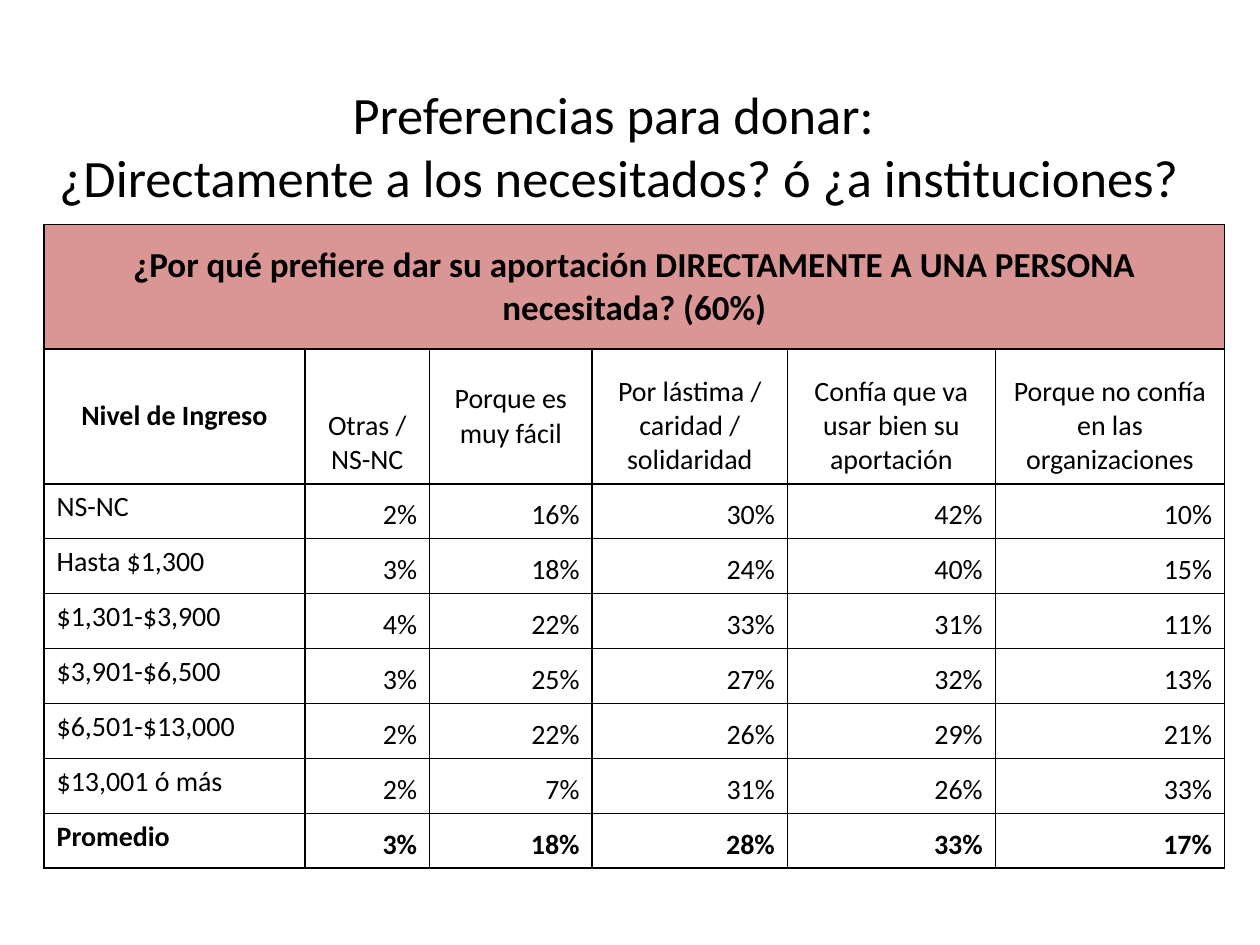
from lxml import etree
from pptx import Presentation
from pptx import util as u
from pptx.dml.color import RGBColor
from pptx.enum import text
from pptx.oxml.ns import qn

# Content
TITLE = ["Preferencias para donar: ",
         "¿Directamente a los necesitados? ó ¿a instituciones?"]
QUESTION = ("¿Por qué prefiere dar su aportación DIRECTAMENTE A UNA PERSONA "
            "necesitada? (60%)")
HEADINGS = ["Nivel de Ingreso", "Otras / NS-NC", "Porque es muy fácil",
            "Por lástima / caridad / solidaridad",
            "Confía que va usar bien su aportación",
            "Porque no confía en las organizaciones"]
INCOME_LEVELS = [
    ("NS-NC", 2, 16, 30, 42, 10),
    ("Hasta $1,300", 3, 18, 24, 40, 15),
    ("$1,301-$3,900", 4, 22, 33, 31, 11),
    ("$3,901-$6,500", 3, 25, 27, 32, 13),
    ("$6,501-$13,000", 2, 22, 26, 29, 21),
    ("$13,001 ó más", 2, 7, 31, 26, 33),
    ("Promedio", 3, 18, 28, 33, 17),
]
COLUMN_WIDTHS = [2.07, 0.99, 1.29, 1.55, 1.65, 1.82]
ROW_HEIGHTS = [0.99, 1.07] + [0.436] * len(INCOME_LEVELS)

BLACK, ROSE = "000000", "D99694"
LEFT, CENTER, RIGHT = (text.PP_ALIGN.LEFT, text.PP_ALIGN.CENTER,
                       text.PP_ALIGN.RIGHT)
TOP, MIDDLE, BOTTOM = (text.MSO_ANCHOR.TOP, text.MSO_ANCHOR.MIDDLE,
                       text.MSO_ANCHOR.BOTTOM)


def color(value):
    return RGBColor.from_string(value)


def write(paragraph, words, size, align, bold=False):
    paragraph.alignment = align
    run = paragraph.add_run()
    run.text = words
    run.font.name = "Calibri"
    run.font.size = u.Pt(size)
    run.font.bold = bold
    run.font.color.rgb = color(BLACK)


def add_borders(cell):
    properties = cell._tc.get_or_add_tcPr()
    for position, side in enumerate(("a:lnL", "a:lnR", "a:lnT", "a:lnB")):
        line = etree.Element(qn(side), w=str(u.Pt(1)))
        fill = etree.SubElement(line, qn("a:solidFill"))
        etree.SubElement(fill, qn("a:srgbClr"), val=BLACK)
        properties.insert(position, line)


def fill_cell(cell, words, align, anchor, size=16, bold=False):
    cell.vertical_anchor = anchor
    write(cell.text_frame.paragraphs[0], words, size, align, bold)


prs = Presentation()
prs.slide_width, prs.slide_height = u.Inches(10), u.Inches(7.5)
slide = prs.slides.add_slide(prs.slide_layouts[6])

# Income table
table = slide.shapes.add_table(
    len(ROW_HEIGHTS), len(COLUMN_WIDTHS), u.Inches(0.35), u.Inches(1.78),
    u.Inches(sum(COLUMN_WIDTHS)), u.Inches(sum(ROW_HEIGHTS))).table
for column, width in zip(table.columns, COLUMN_WIDTHS):
    column.width = u.Inches(width)
for row, height in zip(table.rows, ROW_HEIGHTS):
    row.height = u.Inches(height)
for cell in table.iter_cells():
    cell.fill.background()
    add_borders(cell)

# Question across the full width
question = table.cell(0, 0)
question.merge(table.cell(0, len(COLUMN_WIDTHS) - 1))
question.fill.solid()
question.fill.fore_color.rgb = color(ROSE)
fill_cell(question, QUESTION, CENTER, MIDDLE, size=20, bold=True)

# Column headings
for c, heading in enumerate(HEADINGS):
    fill_cell(table.cell(1, c), heading, CENTER,
              MIDDLE if c in (0, 2) else BOTTOM, bold=c == 0)

# Income levels, with the average in bold
for r, (level, *shares) in enumerate(INCOME_LEVELS, start=2):
    average = level == "Promedio"
    fill_cell(table.cell(r, 0), level, LEFT, TOP, bold=average)
    for c, share in enumerate(shares, start=1):
        fill_cell(table.cell(r, c), f"{share}%", RIGHT, BOTTOM, bold=average)

# Title
title = slide.shapes.add_textbox(u.Inches(0.35), u.Inches(0.6),
                                 u.Inches(9.13), u.Inches(1.25)).text_frame
title.word_wrap = True
title.vertical_anchor = TOP
for i, line in enumerate(TITLE):
    write(title.add_paragraph() if i else title.paragraphs[0],
          line, 30, CENTER)

prs.save("out.pptx")
